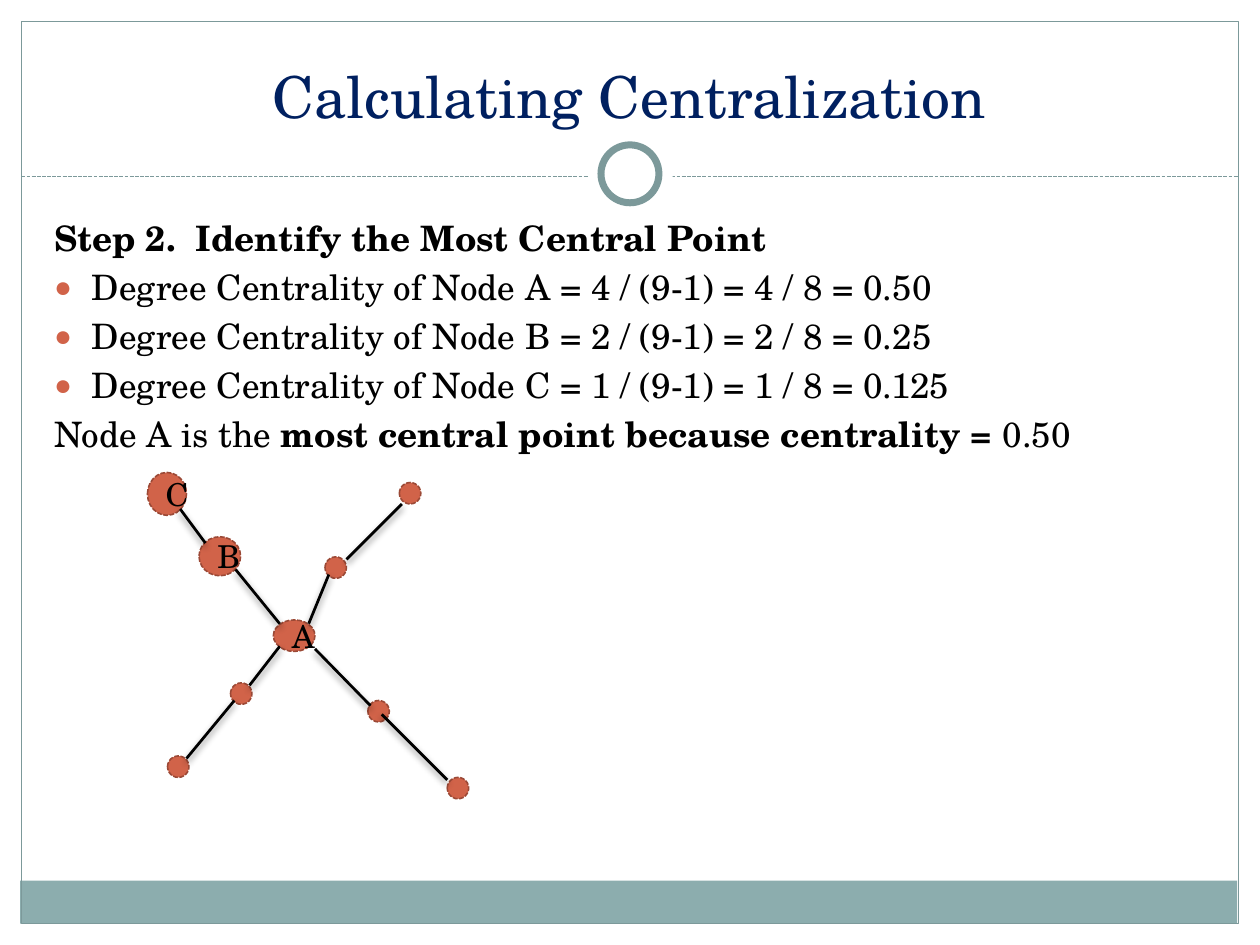
"""Build the slide on calculating network centralization."""

import dataclasses
import typing

import pptx
import pptx.dml.color
import pptx.enum.dml
import pptx.enum.shapes
import pptx.enum.text
import pptx.oxml
import pptx.oxml.ns
import pptx.util

EMU_PER_PX = 9144
Box = tuple[int, int, int, int]
Point = tuple[int, int]
DASH = pptx.enum.dml.MSO_LINE.SQUARE_DOT


@dataclasses.dataclass(frozen=True)
class Theme:
    font: str = "TeX Gyre Schola"
    title_color: str = "002060"
    ink: str = "000000"
    paper: str = "FFFFFF"
    frame: str = "7C999A"
    footer: str = "8CADAE"
    node: str = "D16349"
    node_outline: str = "9B4936"
    title_size: int = 33
    body_size: int = 20
    node_size: int = 18
    hairline: float = 0.75
    node_line: float = 0.9
    edge_line: float = 1.57
    ring_line: float = 4


class TextRun(typing.NamedTuple):
    text: str
    bold: bool = False


class BodyLine(typing.NamedTuple):
    runs: list[TextRun]
    bulleted: bool = False


class Node(typing.NamedTuple):
    box: Box
    label: str = ""


class Edge(typing.NamedTuple):
    start: Point
    end: Point


THEME = Theme()
DEGREES = [("A", 4, "0.50"), ("B", 2, "0.25"), ("C", 1, "0.125")]
BODY = [
    BodyLine([TextRun("Step 2.  Identify the Most Central Point", True)]),
    *[
        BodyLine([TextRun(f"Degree Centrality of Node {name} = {degree} / (9-1) = {degree} / 8 = {value}")], True)
        for name, degree, value in DEGREES
    ],
    BodyLine([
        TextRun("Node A is the "),
        TextRun("most central point because centrality = ", True),
        TextRun("0.50"),
    ]),
]
SMALL_NODES = [(258, 442), (183, 542), (292, 556), (317, 383), (133, 600), (355, 617)]
NODES = [
    Node((217, 492, 33, 25), "A"),
    Node((158, 426, 33, 31), "B"),
    Node((117, 375, 31, 34), "C"),
    *[Node((left, top, 17, 17)) for left, top in SMALL_NODES],
]
EDGES = [
    Edge((143, 404), (163, 431)),
    Edge((319, 400), (275, 444)),
    Edge((187, 452), (222, 495)),
    Edge((261, 456), (245, 495)),
    Edge((250, 515), (294, 560)),
    Edge((222, 513), (198, 544)),
    Edge((303, 567), (355, 619)),
    Edge((186, 556), (148, 602)),
]


def px(length: int) -> pptx.util.Emu:
    """Turn slide pixels into EMU."""
    return pptx.util.Emu(length * EMU_PER_PX)


def rgb(color: str) -> pptx.dml.color.RGBColor:
    """Return the colour object for a hex string."""
    return pptx.dml.color.RGBColor.from_string(color)


def add_run(paragraph, text: str, size: int, color: str, bold: bool = False) -> None:
    """Add one formatted run to a paragraph."""
    run = paragraph.add_run()
    run.text = text
    run.font.name = THEME.font
    run.font.size = pptx.util.Pt(size)
    run.font.bold = bold
    run.font.color.rgb = rgb(color)


def style_line(line, color: str, width: float, dash=None) -> None:
    """Set the colour, width and dash of a line."""
    line.color.rgb = rgb(color)
    line.width = pptx.util.Pt(width)
    if dash is not None:
        line.dash_style = dash


def append_xml(parent, markup: str) -> None:
    """Append a DrawingML element to its parent."""
    head, mark, tail = markup.partition(" " if " " in markup.split(">")[0] else "/")
    namespace = pptx.oxml.ns.nsdecls("a")
    parent.append(pptx.oxml.parse_xml(f"{head} {namespace} {mark}{tail}"))


def add_shape(slide, kind, box: Box, fill: str = "", line: str = "", width: float = 0, dash=None):
    """Add a preset shape with an optional fill and outline."""
    shape = slide.shapes.add_shape(kind, *map(px, box))
    shape.shadow.inherit = False
    if fill:
        shape.fill.solid()
        shape.fill.fore_color.rgb = rgb(fill)
    else:
        shape.fill.background()
    if line:
        style_line(shape.line, line, width, dash)
    else:
        shape.line.fill.background()
    return shape


def add_line(slide, edge: Edge, color: str, width: float, dash=None, shadow: bool = False) -> None:
    """Add a straight connector, with a soft shadow if asked."""
    connector = slide.shapes.add_connector(
        pptx.enum.shapes.MSO_CONNECTOR.STRAIGHT, *map(px, edge.start + edge.end)
    )
    style_line(connector.line, color, width, dash)
    properties = connector._element.spPr
    append_xml(properties, "<a:effectLst/>")
    if shadow:
        append_xml(
            properties[-1],
            '<a:outerShdw blurRad="50800" dist="25400" dir="5400000" rotWithShape="0">'
            f'<a:srgbClr val="{THEME.ink}"><a:alpha val="45000"/></a:srgbClr></a:outerShdw>',
        )


def place(placeholder, box: Box):
    """Move a placeholder and return its text frame."""
    placeholder.left, placeholder.top, placeholder.width, placeholder.height = map(px, box)
    frame = placeholder.text_frame
    frame.word_wrap = True
    frame.auto_size = pptx.enum.text.MSO_AUTO_SIZE.NONE
    return frame


def add_frame(slide) -> None:
    """Draw the footer band, border, divider and ring."""
    shapes = pptx.enum.shapes.MSO_SHAPE
    add_shape(slide, shapes.RECTANGLE, (16, 699, 966, 34), THEME.footer)
    add_shape(slide, shapes.RECTANGLE, (17, 17, 966, 716), line=THEME.frame, width=THEME.hairline)
    add_line(slide, Edge((17, 140), (983, 140)), THEME.frame, THEME.hairline, DASH)
    add_shape(slide, shapes.OVAL, (467, 105, 67, 67), THEME.paper)
    add_shape(slide, shapes.OVAL, (477, 115, 46, 46), THEME.paper, THEME.frame, THEME.ring_line)


def add_title(slide, text: str) -> None:
    """Fill the title placeholder."""
    frame = place(slide.shapes.title, (33, 25, 933, 83))
    frame.vertical_anchor = pptx.enum.text.MSO_ANCHOR.BOTTOM
    frame.paragraphs[0].alignment = pptx.enum.text.PP_ALIGN.CENTER
    add_run(frame.paragraphs[0], text, THEME.title_size, THEME.title_color)


def add_body(slide, lines: list[BodyLine]) -> None:
    """Fill the body placeholder with plain and bulleted lines."""
    frame = place(slide.placeholders[1], (33, 167, 930, 500))
    for index, line in enumerate(lines):
        paragraph = frame.add_paragraph() if index else frame.paragraphs[0]
        paragraph.space_before = pptx.util.Pt(THEME.body_size * 0.2)
        properties = paragraph._p.get_or_add_pPr()
        indent = px(30) if line.bulleted else 0
        properties.set("marL", str(indent))
        properties.set("indent", str(-indent))
        if line.bulleted:
            append_xml(properties, f'<a:buClr ><a:srgbClr val="{THEME.node}"/></a:buClr>')
            append_xml(properties, '<a:buSzPct val="85000"/>')
            append_xml(properties, '<a:buChar char="●"/>')
        else:
            append_xml(properties, "<a:buNone/>")
        for run in line.runs:
            add_run(paragraph, run.text, THEME.body_size, THEME.ink, run.bold)


def add_node(slide, node: Node) -> None:
    """Draw one network node with its label."""
    shape = add_shape(slide, pptx.enum.shapes.MSO_SHAPE.OVAL, node.box, THEME.node, THEME.node_outline, THEME.node_line, DASH)
    if node.label:
        frame = shape.text_frame
        frame.word_wrap = True
        frame.vertical_anchor = pptx.enum.text.MSO_ANCHOR.MIDDLE
        frame.paragraphs[0].alignment = pptx.enum.text.PP_ALIGN.CENTER
        add_run(frame.paragraphs[0], node.label, THEME.node_size, THEME.ink)


def main() -> None:
    """Build and save the presentation."""
    presentation = pptx.Presentation()
    presentation.slide_width, presentation.slide_height = px(1000), px(750)
    slide = presentation.slides.add_slide(presentation.slide_layouts[1])
    add_frame(slide)
    add_title(slide, "Calculating Centralization")
    add_body(slide, BODY)
    for node in NODES:
        add_node(slide, node)
    for edge in EDGES:
        add_line(slide, edge, THEME.ink, THEME.edge_line, shadow=True)
    presentation.save("out.pptx")


if __name__ == "__main__":
    main()
